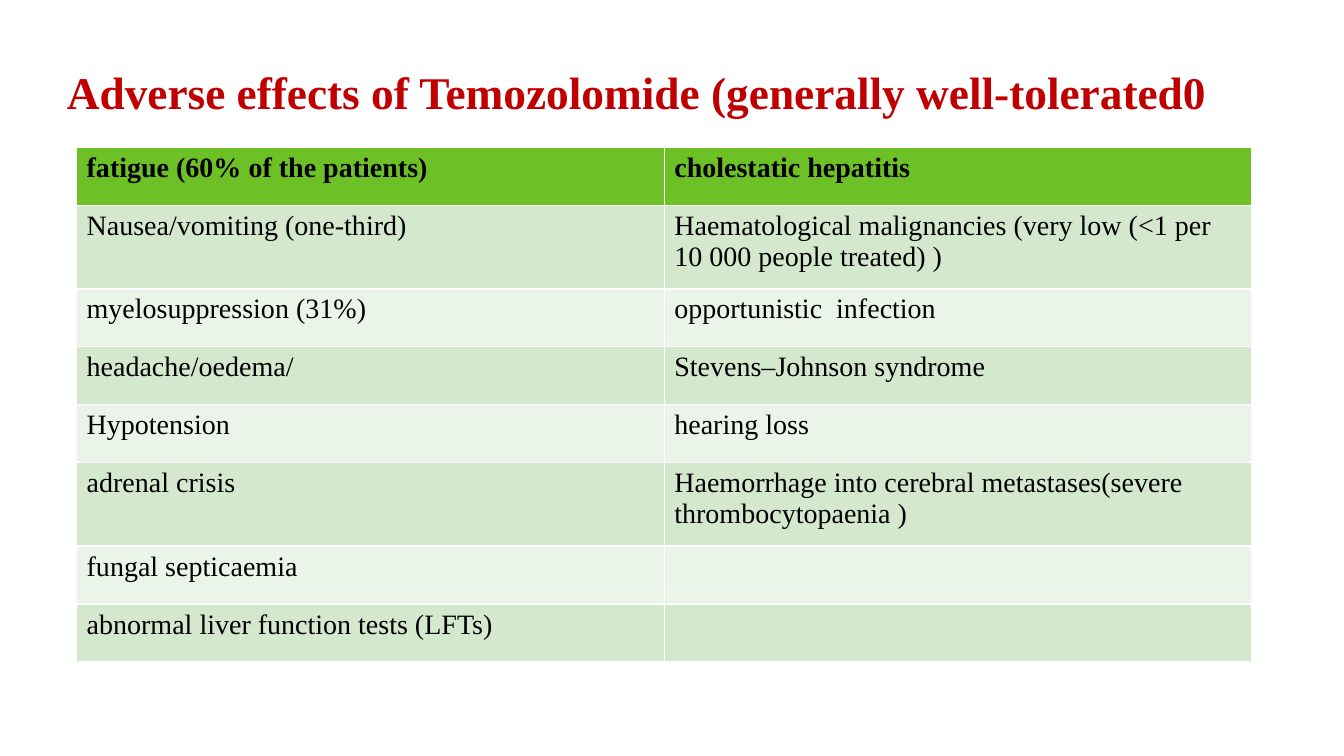
from pptx import Presentation
from pptx.dml.color import RGBColor
from pptx.enum import text
from pptx.util import Cm, Pt

FONT = "Times New Roman"
RED = RGBColor(0xC0, 0x00, 0x00)
BLACK = RGBColor(0x00, 0x00, 0x00)
HEADER_GREEN = RGBColor(0x6D, 0xC0, 0x25)
BAND_GREENS = (RGBColor(0xEB, 0xF4, 0xE8), RGBColor(0xD4, 0xE8, 0xCD))

ROW_HEIGHT = Cm(1.46)
TALL_ROW_HEIGHT = Cm(2.1)
TALL_ROWS = (1, 5)
COLUMN_WIDTH = Cm(14.81)

EFFECTS = [
    ("fatigue (60% of the patients)", "cholestatic hepatitis"),
    ("Nausea/vomiting (one-third)",
     "Haematological malignancies (very low (<1 per 10 000 people treated) )"),
    ("myelosuppression (31%)", "opportunistic  infection"),
    ("headache/oedema/", "Stevens–Johnson syndrome"),
    ("Hypotension", "hearing loss"),
    ("adrenal crisis",
     "Haemorrhage into cerebral metastases(severe thrombocytopaenia )"),
    ("fungal septicaemia", ""),
    ("abnormal liver function tests (LFTs)", ""),
]


def format_paragraph(paragraph, size, color, bold):
    for span in paragraph.runs:
        span.font.name = FONT
        span.font.size = Pt(size)
        span.font.bold = bold
        span.font.color.rgb = color


def set_title(page, wording):
    box = page.shapes.title
    box.left, box.top, box.width, box.height = Cm(1.43), Cm(0.63), Cm(31.22), Cm(2.51)
    frame = box.text_frame
    frame.text = wording
    frame.word_wrap = True
    frame.auto_size = text.MSO_AUTO_SIZE.NONE
    frame.vertical_anchor = text.MSO_ANCHOR.BOTTOM
    paragraph = frame.paragraphs[0]
    paragraph.alignment = text.PP_ALIGN.LEFT
    paragraph.line_spacing = 0.9
    format_paragraph(paragraph, 32.4, RED, True)


def fill_cell(cell, wording, row_index):
    is_header = row_index == 0
    cell.fill.solid()
    cell.fill.fore_color.rgb = HEADER_GREEN if is_header else BAND_GREENS[row_index % 2]
    if wording:
        cell.text_frame.text = wording
        format_paragraph(cell.text_frame.paragraphs[0], 20, BLACK, is_header)


def add_effects_table(page):
    heights = [TALL_ROW_HEIGHT if index in TALL_ROWS else ROW_HEIGHT
               for index in range(len(EFFECTS))]
    table = page.shapes.add_table(len(EFFECTS), 2, Cm(1.93), Cm(3.72),
                                  2 * COLUMN_WIDTH, sum(heights)).table
    for column in table.columns:
        column.width = COLUMN_WIDTH
    for row_index, (row, effects) in enumerate(zip(table.rows, EFFECTS)):
        row.height = heights[row_index]
        for cell, wording in zip(row.cells, effects):
            fill_cell(cell, wording, row_index)


def main():
    deck = Presentation()
    deck.slide_width, deck.slide_height = Cm(33.87), Cm(19.05)
    page = deck.slides.add_slide(deck.slide_layouts[5])
    set_title(page, "Adverse effects of Temozolomide (generally well-tolerated0")
    add_effects_table(page)
    deck.save("out.pptx")


if __name__ == "__main__":
    main()
